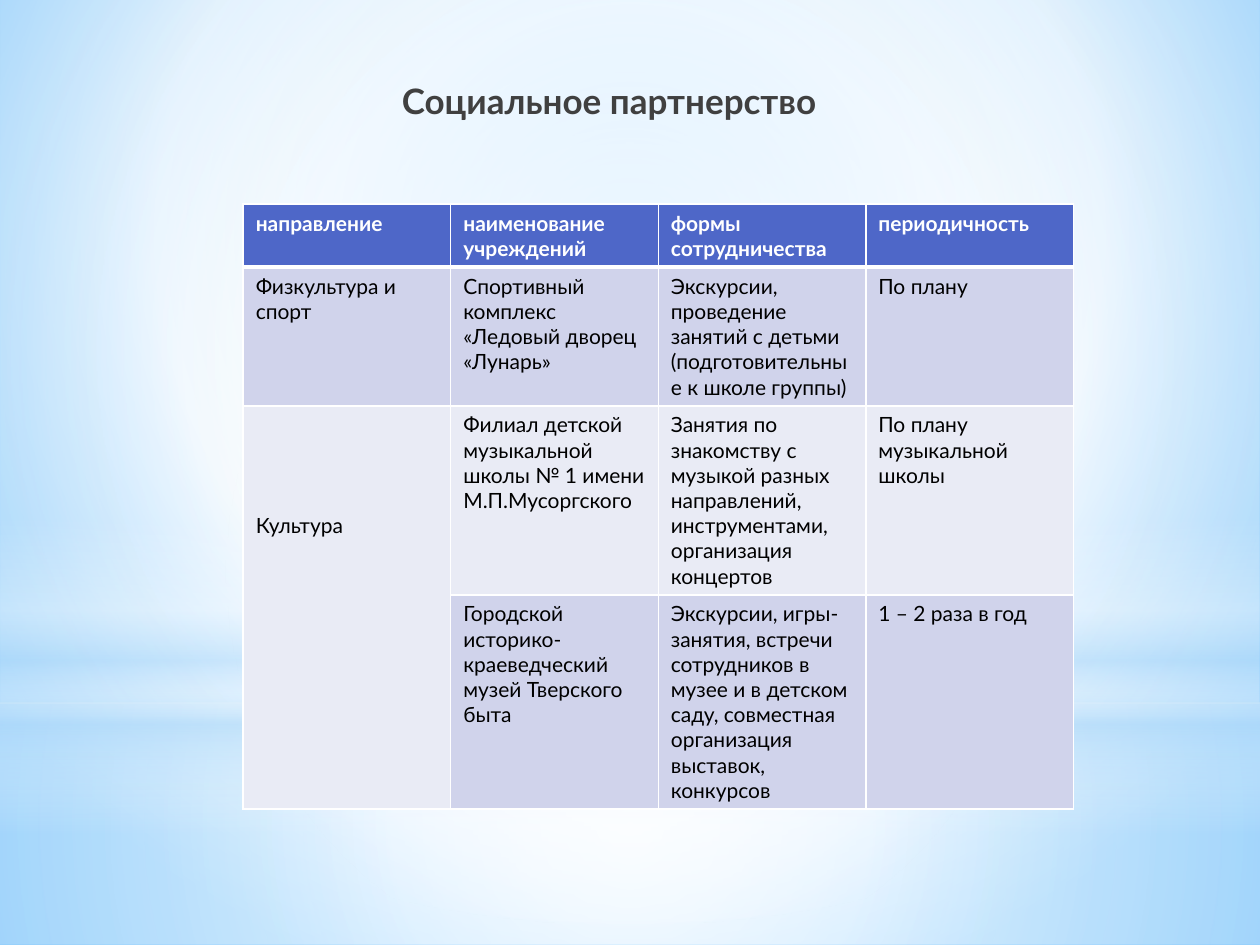
from dataclasses import dataclass
from typing import Optional

from lxml.etree import SubElement
from pptx import Presentation
from pptx.dml.color import RGBColor
from pptx.enum.shapes import MSO_SHAPE
from pptx.enum.text import MSO_ANCHOR, MSO_AUTO_SIZE, PP_ALIGN
from pptx.oxml.ns import qn
from pptx.util import Inches, Pt

FONT = "Lato"
WHITE = RGBColor(0xFF, 0xFF, 0xFF)
BLACK = RGBColor(0x00, 0x00, 0x00)
TITLE_GREY = RGBColor(0x40, 0x40, 0x40)
HEADER_BLUE = RGBColor(0x4E, 0x67, 0xC8)
BAND_DARK = RGBColor(0xD0, 0xD3, 0xEB)
BAND_LIGHT = RGBColor(0xE9, 0xEB, 0xF5)
PALE_BLUE = RGBColor(0xB4, 0xDC, 0xFA)
SKY = RGBColor(0x9E, 0xD5, 0xFF)
DEEP_SKY = RGBColor(0x5B, 0xB9, 0xFF)


@dataclass
class Stop:
    pos: int
    color: RGBColor
    opacity: int = 100


@dataclass
class Gradient:
    stops: list[Stop]
    focus: tuple[int, int, int, int] = (50, 50, 50, 50)  # left, top, right, bottom
    angle: Optional[int] = None  # linear when given, circular otherwise


@dataclass
class Glow:
    top: float
    height: float
    gradient: Gradient
    shape: MSO_SHAPE = MSO_SHAPE.RECTANGLE


BACKDROP = Gradient([Stop(0, SKY), Stop(60, WHITE), Stop(100, DEEP_SKY)], (20, 10, 20, 60))
GLOWS = [
    Glow(5.58, 1.92, Gradient([Stop(0, WHITE, 91), Stop(37, WHITE, 76), Stop(100, PALE_BLUE, 79)])),
    Glow(0, 5.58, Gradient([Stop(0, WHITE, 89), Stop(48, WHITE, 62), Stop(100, PALE_BLUE, 79)])),
    Glow(4.12, 2.5, Gradient([Stop(0, WHITE, 0), Stop(29, WHITE, 30), Stop(45, PALE_BLUE, 40),
                              Stop(55, WHITE, 26), Stop(65, PALE_BLUE, 60), Stop(100, WHITE, 0)],
                             angle=90)),
    Glow(1.75, 5.58, Gradient([Stop(0, WHITE), Stop(56, WHITE, 0)]), MSO_SHAPE.OVAL),
]

ROW_HEIGHTS = [0.5, 1.1, 1.5, 1.7]
ROW_FILLS = [HEADER_BLUE, BAND_DARK, BAND_LIGHT, BAND_DARK]
ROWS = [
    ["направление", "наименование учреждений", "формы сотрудничества", "периодичность"],
    ["Физкультура и спорт", "Спортивный комплекс «Ледовый дворец «Лунарь»",
     "Экскурсии, проведение занятий с детьми\n(подготовительные к школе группы)", "По плану"],
    ["Культура", "Филиал детской музыкальной школы № 1 имени М.П.Мусоргского",
     "Занятия по знакомству с музыкой разных направлений, инструментами, организация концертов",
     "По плану музыкальной школы"],
    ["", "Городской историко-краеведческий музей Тверского быта",
     "Экскурсии, игры-занятия, встречи сотрудников в музее и в детском саду, "
     "совместная организация выставок, конкурсов", "1 – 2 раза в год"],
]


def write_text(tf, text: str, *, size: float, color: RGBColor, bold: bool = False,
               align: PP_ALIGN = PP_ALIGN.LEFT) -> None:
    for i, line in enumerate(text.split("\n")):
        p = tf.paragraphs[0] if i == 0 else tf.add_paragraph()
        p.alignment = align
        r = p.add_run()
        r.text = line
        r.font.name, r.font.size, r.font.bold = FONT, Pt(size), bold
        r.font.color.rgb = color


def apply_gradient(fill, props, gradient: Gradient) -> None:
    """Swap the fill inside a properties element for a gradient."""
    fill.background()
    old = props.find(qn("a:noFill"))
    grad = SubElement(props, qn("a:gradFill"), rotWithShape="1")
    props.replace(old, grad)
    stops = SubElement(grad, qn("a:gsLst"))
    for stop in gradient.stops:
        gs = SubElement(stops, qn("a:gs"), pos=str(stop.pos * 1000))
        color = SubElement(gs, qn("a:srgbClr"), val=str(stop.color))
        if stop.opacity < 100:
            SubElement(color, qn("a:alpha"), val=str(stop.opacity * 1000))
    if gradient.angle is not None:
        SubElement(grad, qn("a:lin"), ang=str(gradient.angle * 60000), scaled="0")
    else:
        circle = SubElement(grad, qn("a:path"), path="circle")
        sides = {side: str(v * 1000) for side, v in zip("ltrb", gradient.focus)}
        SubElement(circle, qn("a:fillToRect"), **sides)


def add_glow(s, glow: Glow) -> None:
    sp = s.shapes.add_shape(glow.shape, 0, Inches(glow.top), Inches(10), Inches(glow.height))
    sp.shadow.inherit = False
    sp.line.fill.background()
    apply_gradient(sp.fill, sp.element.spPr, glow.gradient)


def set_borders(cell, widths: dict[str, float]) -> None:
    props = cell._tc.get_or_add_tcPr()
    for side, width in widths.items():
        line = SubElement(props, qn(f"a:ln{side}"), w=str(Pt(width)))
        SubElement(SubElement(line, qn("a:solidFill")), qn("a:srgbClr"), val=str(WHITE))


def add_partners_table(s) -> None:
    table = s.shapes.add_table(len(ROWS), len(ROWS[0]), Inches(1.93), Inches(1.62),
                               Inches(6.59), Inches(sum(ROW_HEIGHTS))).table
    for i, (texts, height, color) in enumerate(zip(ROWS, ROW_HEIGHTS, ROW_FILLS)):
        table.rows[i].height = Inches(height)
        header = i == 0
        for j, text in enumerate(texts):
            cell = table.cell(i, j)
            set_borders(cell, {"L": 1, "R": 1, "T": 3 if i == 1 else 1, "B": 3 if header else 1})
            cell.fill.solid()
            cell.fill.fore_color.rgb = color
            if text:
                write_text(cell.text_frame, text, size=12, bold=header,
                           color=WHITE if header else BLACK)
    # "Культура" covers both of its institutions
    culture = table.cell(2, 0)
    culture.merge(table.cell(3, 0))
    culture.margin_top = Inches(0.85)


def add_title(s) -> None:
    title = s.shapes.title
    s.shapes.element.append(title.element)  # bring in front of the glows
    title.left, title.top = Inches(0.51), Inches(0.58)
    title.width, title.height = Inches(8.98), Inches(6.93)
    tf = title.text_frame
    tf.word_wrap, tf.auto_size = True, MSO_AUTO_SIZE.NONE
    tf.vertical_anchor = MSO_ANCHOR.TOP
    tf.margin_right = Inches(0.43)
    write_text(tf, "Социальное партнерство", size=20, color=TITLE_GREY, bold=True,
               align=PP_ALIGN.CENTER)


def main() -> None:
    prs = Presentation()
    prs.slide_width, prs.slide_height = Inches(10), Inches(7.5)
    s = prs.slides.add_slide(prs.slide_layouts[5])

    # Backdrop
    fill = s.background.fill
    fill.background()
    apply_gradient(fill, next(s.element.iter(qn("p:bgPr"))), BACKDROP)
    for glow in GLOWS:
        add_glow(s, glow)

    # Content
    add_title(s)
    add_partners_table(s)
    prs.save("out.pptx")


if __name__ == "__main__":
    main()
